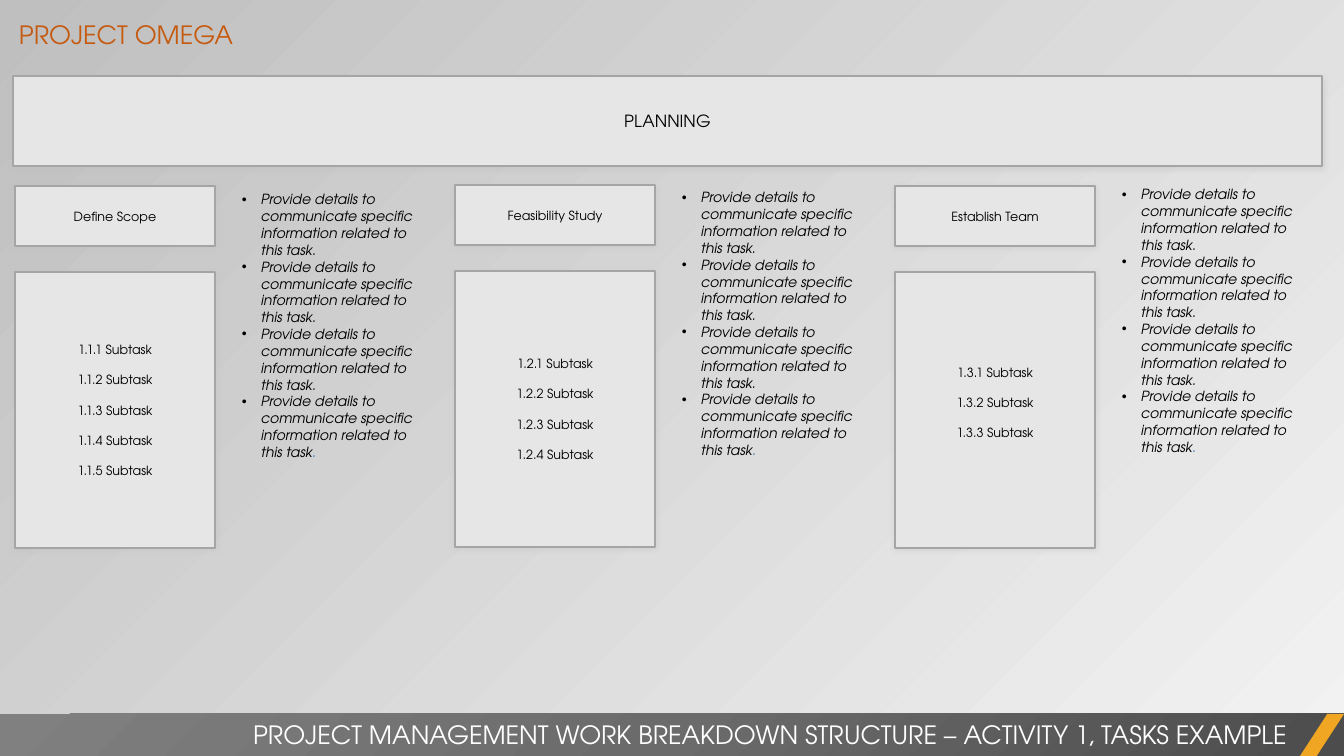
import pptx
import pptx.util
import pptx.dml.color
import pptx.enum.shapes
import pptx.enum.text
import pptx.oxml
import pptx.oxml.ns

EMU = 914400 / 100.8  # one px
COLORS = {
    "panel": "E7E6E6", "edge": "A5A5A5", "shade": "BFBFBF", "light": "F2F2F2",
    "ink": "000000", "white": "FFFFFF", "title": "C55A11", "dot": "2E75B6",
    "stripe": "F0A622", "dark": "4C4C4C", "mid": "6B6B6B", "gray": "808080",
}
SHAPE = pptx.enum.shapes.MSO_SHAPE
ALIGN = pptx.enum.text.PP_ALIGN
DETAIL = "Provide details to communicate specific information related to this task"
# name, number of subtasks, top of boxes, top of details, lift of the list
TASKS = [
    ("Define Scope", 5, 186, 186, 0),
    ("Feasibility Study", 4, 185, 184, 0),
    ("Establish Team", 3, 186, 181, 15),
]


def px(n):
    return pptx.util.Emu(round(n * EMU))


def rgb(name):
    return pptx.dml.color.RGBColor.from_string(COLORS[name])


def xml(tag, body):
    """Parse one DrawingML element given its tag with attributes and its body."""
    ns = pptx.oxml.ns.nsdecls("a")
    return pptx.oxml.parse_xml(f"<a:{tag} {ns}>{body}</a:{tag.split()[0]}>")


def tint(name, alpha=100):
    return f'<a:srgbClr val="{COLORS[name]}"><a:alpha val="{alpha * 1000}"/></a:srgbClr>'


def blend(owner, fill, stops, shade):
    """Give a fill the (position, colour, alpha) stops and the shade element."""
    fill.gradient()
    grad = next(owner.element.iter(pptx.oxml.ns.qn("a:gradFill")))
    for child in list(grad):
        grad.remove(child)
    marks = "".join(f'<a:gs pos="{pos * 1000}">{tint(name, alpha)}</a:gs>'
                    for pos, name, alpha in stops)
    grad.append(xml("gsLst", marks))
    grad.append(shade)


def write(para, text, size=9, color="ink", italic=False):
    run = para.add_run()
    run.text = text
    run.font.name = "TeX Gyre Adventor"
    run.font.size = pptx.util.Pt(size)
    run.font.italic = italic
    run.font.color.rgb = rgb(color)


def fill_text(frame, lines, align=ALIGN.LEFT, gap=0, bullet=False, **style):
    """Write one paragraph a line and return the last paragraph."""
    frame.word_wrap = True
    for i, line in enumerate(lines):
        para = frame.add_paragraph() if i else frame.paragraphs[0]
        para.alignment = align
        if i and gap:
            para.space_before = pptx.util.Pt(gap)
        if bullet:
            props = para._p.get_or_add_pPr()
            props.set("marL", str(px(19)))
            props.set("indent", str(px(-19)))
            props.append(xml('buFont typeface="Arial"', ""))
            props.append(xml('buChar char="•"', ""))
        write(para, line, **style)
    return para


class Board:
    def __init__(self, slide):
        self.slide = slide

    def shape(self, x, y, w, h, kind=SHAPE.RECTANGLE):
        item = self.slide.shapes.add_shape(kind, px(x), px(y), px(w), px(h))
        item.shadow.inherit = False
        item.line.fill.background()
        return item

    def panel(self, x, y, w, h, lines, lift=0, **style):
        box = self.shape(x, y, w, h)
        box.fill.solid()
        box.fill.fore_color.rgb = rgb("panel")
        box.line.color.rgb = rgb("edge")
        box.line.width = pptx.util.Pt(1)
        glow = xml('outerShdw blurRad="50800" dist="12700" dir="5400000" '
                   'algn="t" rotWithShape="0"', tint("shade", 40))
        box.element.spPr.find(pptx.oxml.ns.qn("a:effectLst")).append(glow)
        frame = box.text_frame
        frame.vertical_anchor = pptx.enum.text.MSO_ANCHOR.MIDDLE
        frame.margin_bottom = px(5 + lift)
        fill_text(frame, lines, align=ALIGN.CENTER, **style)

    def label(self, x, y, w, h, lines, **style):
        box = self.slide.shapes.add_textbox(px(x), px(y), px(w), px(h))
        last = fill_text(box.text_frame, lines, **style)
        box.text_frame.auto_size = pptx.enum.text.MSO_AUTO_SIZE.SHAPE_TO_FIT_TEXT
        return last

    def backdrop(self):
        blend(self.slide, self.slide.background.fill,
              [(0, "light", 40), (100, "shade", 100)],
              xml('lin ang="13500000" scaled="0"', ""))

    def footer(self, text):
        bar = self.shape(0, 714, 1344, 42)
        blend(bar, bar.fill,
              [(0, "dark", 100), (50, "mid", 100), (100, "gray", 100)],
              xml('path path="circle"', '<a:fillToRect l="100000" t="100000"/>'))
        stripe = self.shape(1300, 714, 44, 42, SHAPE.PARALLELOGRAM)
        stripe.adjustments[0] = 0.65
        stripe.fill.solid()
        stripe.fill.fore_color.rgb = rgb("stripe")
        self.label(0, 714, 1297, 40, [text], align=ALIGN.RIGHT, size=18, color="white")

    def task(self, num, name, count, top, side, lift):
        x = 15 + 440 * (num - 1)
        self.panel(x, top, 200, 60, [name])
        subs = [f"1.{num}.{k} Subtask" for k in range(1, count + 1)]
        self.panel(x, top + 86, 200, 276, subs, lift=lift, gap=10.8)
        last = self.label(x + 217, side, 208, 302, [DETAIL + "."] * 3 + [DETAIL],
                          bullet=True, size=10, italic=True)
        write(last, ".", size=10, color="dot", italic=True)


def main():
    deck = pptx.Presentation()
    deck.slide_width, deck.slide_height = px(1344), px(756)
    board = Board(deck.slides.add_slide(deck.slide_layouts[6]))
    board.backdrop()
    board.panel(13, 76, 1309, 90, ["PLANNING"], size=12)
    board.footer("PROJECT MANAGEMENT WORK BREAKDOWN STRUCTURE – ACTIVITY 1, TASKS EXAMPLE")
    board.label(9, 14, 1019, 40, ["PROJECT OMEGA"], size=18, color="title")
    for num, task in enumerate(TASKS, 1):
        board.task(num, *task)
    deck.save("out.pptx")


if __name__ == "__main__":
    main()
